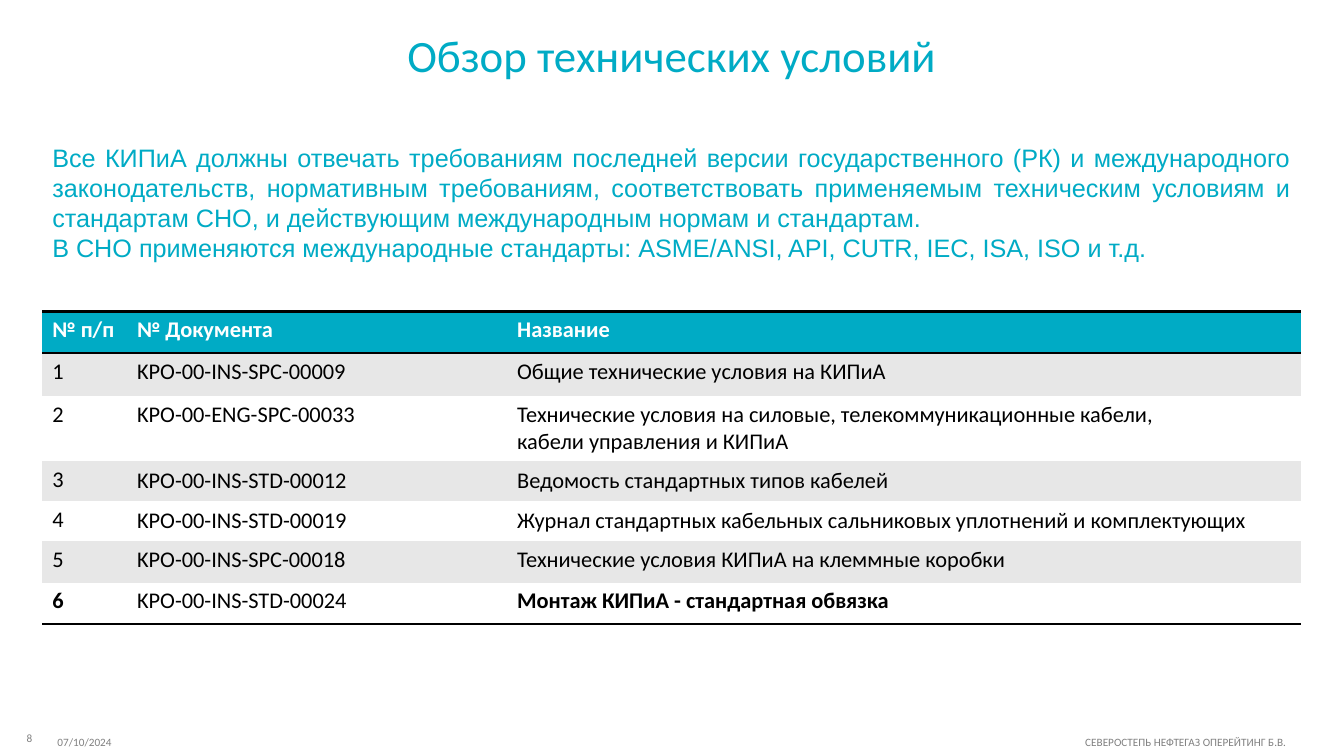
from lxml import etree
from pptx import Presentation
from pptx.dml.color import RGBColor
from pptx.enum.text import MSO_ANCHOR, PP_ALIGN
from pptx.oxml.ns import qn
from pptx.util import Inches, Pt

TOP, MIDDLE = MSO_ANCHOR.TOP, MSO_ANCHOR.MIDDLE
LEFT, CENTER = PP_ALIGN.LEFT, PP_ALIGN.CENTER
RIGHT, JUSTIFY = PP_ALIGN.RIGHT, PP_ALIGN.JUSTIFY

TEAL = RGBColor(0x00, 0xAB, 0xC5)
WHITE = RGBColor(0xFF, 0xFF, 0xFF)
BLACK = RGBColor(0x00, 0x00, 0x00)
BAND = RGBColor(0xE7, 0xE7, 0xE7)
GRAY = RGBColor(0x80, 0x80, 0x80)

HEADING = "Обзор технических условий"
REQUIREMENTS = [
    "Все КИПиА должны отвечать требованиям последней версии государственного (РК) "
    "и международного законодательств, нормативным требованиям, соответствовать "
    "применяемым техническим условиям и стандартам СНО, и действующим "
    "международным нормам и стандартам.",
    "В СНО применяются международные стандарты: "
    "ASME/ANSI, API, CUTR, IEC, ISA, ISO и т.д.",
]
DOCUMENTS = [
    ("№ п/п", "№ Документа", "Название"),
    ("1", "KPO-00-INS-SPC-00009", "Общие технические условия на КИПиА"),
    ("2", "KPO-00-ENG-SPC-00033",
     "Технические условия на силовые, телекоммуникационные кабели,\n"
     "кабели управления и КИПиА"),
    ("3", "KPO-00-INS-STD-00012", "Ведомость стандартных типов кабелей"),
    ("4", "KPO-00-INS-STD-00019",
     "Журнал стандартных кабельных сальниковых уплотнений и комплектующих"),
    ("5", "KPO-00-INS-SPC-00018", "Технические условия КИПиА на клеммные коробки"),
    ("6", "KPO-00-INS-STD-00024", "Монтаж КИПиА - стандартная обвязка"),
]
COLUMN_WIDTHS = (0.84, 3.77, 7.87)
ROW_HEIGHTS = (0.41, 0.43, 0.64, 0.4, 0.4, 0.41, 0.41)
BOLD_CELLS = {(0, 0), (0, 1), (0, 2), (6, 0), (6, 2)}
MIDDLE_CELLS = {(3, 1), (3, 2), (4, 1), (4, 2)}


class SlideBuilder:
    def __init__(self, slide, font="Calibri"):
        self.slide = slide
        self.font = font

    def add_lines(self, frame, lines, size, color, aligns=(LEFT,), bold=False, font=None):
        for index, line in enumerate(lines):
            paragraph = frame.paragraphs[0] if index == 0 else frame.add_paragraph()
            paragraph.alignment = aligns[min(index, len(aligns) - 1)]
            run = paragraph.add_run()
            run.text = line
            run.font.name = font or self.font
            run.font.size = Pt(size)
            run.font.bold = bold
            run.font.color.rgb = color

    def title(self, text, left, top, width, height):
        heading = self.slide.shapes.title
        heading.left, heading.top = Inches(left), Inches(top)
        heading.width, heading.height = Inches(width), Inches(height)
        heading.text_frame.vertical_anchor = TOP
        self.add_lines(heading.text_frame, [text], 32, TEAL, (CENTER,))

    def text(self, lines, left, top, width, height, size, color,
             aligns=(LEFT,), anchor=TOP, font=None):
        box = self.slide.shapes.add_textbox(
            Inches(left), Inches(top), Inches(width), Inches(height))
        frame = box.text_frame
        frame.word_wrap = True
        frame.vertical_anchor = anchor
        self.add_lines(frame, lines, size, color, aligns, font=font)
        return frame

    def footer(self, date, company, left, top, width, height, margin):
        frame = self.text([f"{date}\t{company}"], left, top, width, height,
                          8, GRAY, anchor=MIDDLE)
        frame.margin_left = Inches(margin)
        properties = frame.paragraphs[0]._p.get_or_add_pPr()
        tabs = etree.SubElement(properties, qn("a:tabLst"))
        etree.SubElement(tabs, qn("a:tab"), algn="r",
                         pos=str(Inches(width - 2 * margin)))

    def borders(self, cell, ruled_sides):
        properties = cell._tc.get_or_add_tcPr()
        for side in "LRTB":
            ruled = side in ruled_sides
            line = etree.SubElement(properties, qn(f"a:ln{side}"),
                                    w=str(Pt(2) if ruled else 0))
            fill = etree.SubElement(line, qn("a:solidFill" if ruled else "a:noFill"))
            if ruled:
                etree.SubElement(fill, qn("a:srgbClr"), val=str(BLACK))

    def table(self, rows, left, top):
        table = self.slide.shapes.add_table(
            len(rows), len(COLUMN_WIDTHS), Inches(left), Inches(top),
            Inches(sum(COLUMN_WIDTHS)), Inches(sum(ROW_HEIGHTS))).table
        table.horz_banding = False
        for column, width in zip(table.columns, COLUMN_WIDTHS):
            column.width = Inches(width)
        for r, values in enumerate(rows):
            table.rows[r].height = Inches(ROW_HEIGHTS[r])
            # Rules frame the header and close the last row
            ruled_sides = {0: "TB", 1: "T", len(rows) - 1: "B"}.get(r, "")
            background = TEAL if r == 0 else BAND if r % 2 else WHITE
            for c, value in enumerate(values):
                cell = table.cell(r, c)
                self.borders(cell, ruled_sides)
                cell.fill.solid()
                cell.fill.fore_color.rgb = background
                cell.vertical_anchor = MIDDLE if (r, c) in MIDDLE_CELLS else TOP
                self.add_lines(cell.text_frame, value.split("\n"), 16,
                               WHITE if r == 0 else BLACK, bold=(r, c) in BOLD_CELLS)


def main():
    deck = Presentation()
    deck.slide_width, deck.slide_height = Inches(13.33), Inches(7.5)
    builder = SlideBuilder(deck.slides.add_slide(deck.slide_layouts[5]))

    # Heading and requirements
    builder.title(HEADING, 0, 0.22, 13.33, 0.91)
    builder.text(REQUIREMENTS, 0.42, 1.36, 12.48, 1.31, 18, TEAL,
                 aligns=(JUSTIFY, LEFT), font="Arial")

    # List of specifications
    builder.table(DOCUMENTS, 0.42, 3.09)

    # Page number and footer
    builder.text(["8"], 0.01, 7.14, 0.41, 0.36, 8, GRAY, (RIGHT,), MIDDLE)
    builder.footer("07/10/2024", "СЕВЕРОСТЕПЬ НЕФТЕГАЗ ОПЕРЕЙТИНГ Б.В.",
                   0, 7.23, 13.33, 0.27, 0.57)

    deck.save("out.pptx")


if __name__ == "__main__":
    main()
